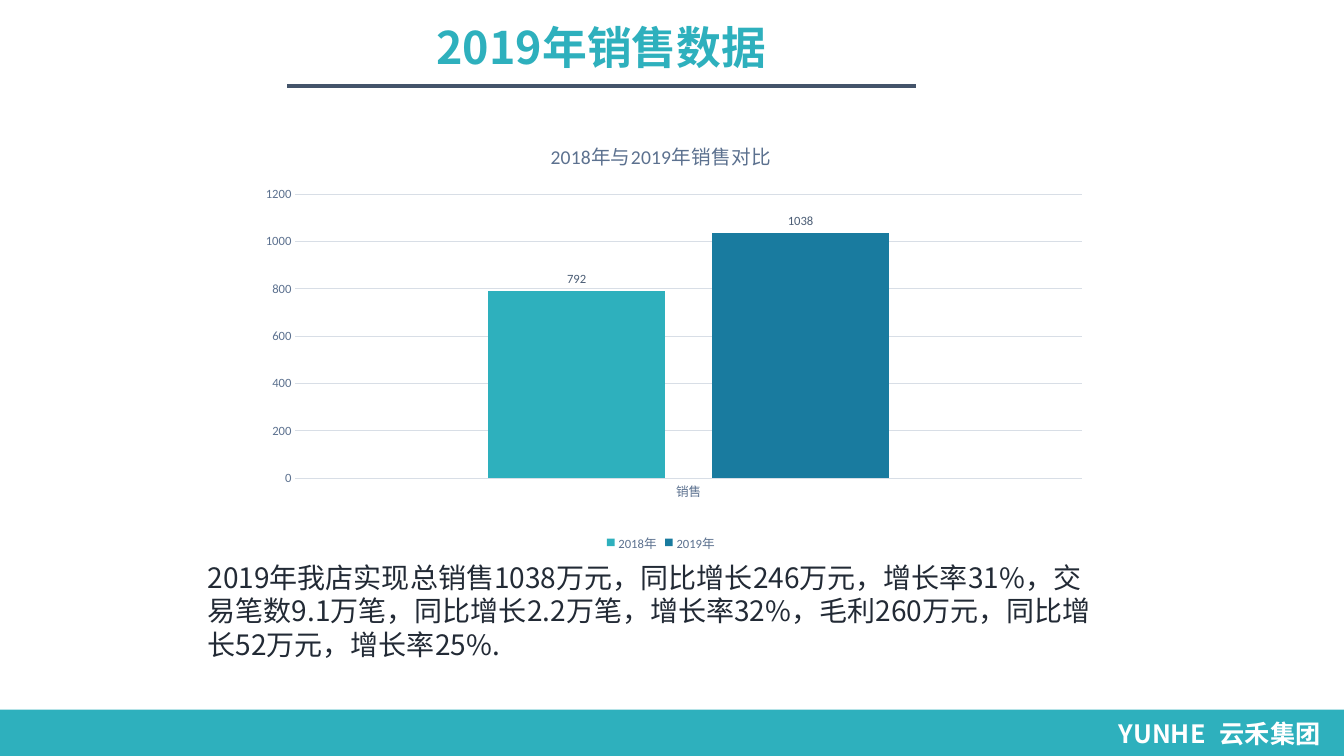
"""Build the 2019 sales slide with a column chart and a summary."""
from lxml import etree
from pptx import Presentation
from pptx.chart.data import CategoryChartData
from pptx.dml.color import RGBColor
from pptx.enum.chart import XL_CHART_TYPE as ChartType
from pptx.enum.chart import XL_LABEL_POSITION as LabelPosition
from pptx.enum.chart import XL_LEGEND_POSITION as LegendPosition
from pptx.enum.chart import XL_TICK_MARK as TickMark
from pptx.enum.shapes import MSO_CONNECTOR as Connector
from pptx.enum.shapes import MSO_SHAPE as Shape
from pptx.enum.text import MSO_ANCHOR as Anchor
from pptx.enum.text import PP_ALIGN as Align
from pptx.oxml import parse_xml
from pptx.oxml.ns import nsdecls, qn
from pptx.util import Inches, Pt

TEAL, BLUE, SLATE, GRID = "2EB0BD", "197B9F", "5C718F", "D8DEE6"
CJK = "Noto Sans CJK SC"


def color(value):
    """Turn a hex string into a colour."""
    return RGBColor.from_string(value)


def style_font(font, fill, **values):
    """Set the colour and the other format values of a font."""
    font.color.rgb = color(fill)
    for name, value in values.items():
        setattr(font, name, value)


presentation = Presentation()
presentation.slide_width = Inches(13.33)
presentation.slide_height = Inches(7.5)
slide = presentation.slides.add_slide(presentation.slide_layouts[6])

title_line = slide.shapes.add_connector(
    Connector.STRAIGHT, Inches(2.85), Inches(0.85), Inches(9.09), Inches(0.85))
title_line.line.color.rgb = color("44546A")
title_line.line.width = Pt(3)
etree.SubElement(title_line._element.spPr, qn("a:effectLst"))

footer = slide.shapes.add_shape(
    Shape.RECTANGLE, Inches(0), Inches(7.04), Inches(13.33), Inches(0.46))
footer.shadow.inherit = False
footer.fill.solid()
footer.fill.fore_color.rgb = color(TEAL)
footer.line.fill.background()

texts = [
    {"text": "2019年销售数据", "box": (1.74, 0.22, 8.45, 0.55), "size": 32,
     "fill": TEAL, "bold": True,
     "frame": {"vertical_anchor": Anchor.MIDDLE, "margin_left": 0, "margin_right": 0},
     "paragraph": {"alignment": Align.CENTER, "line_spacing": 0.9}},
    {"text": "YUNHE\t云禾集团", "box": (11, 7.08, 2.33, 0.4), "size": 18,
     "fill": "FFFFFF", "bold": True, "frame": {}, "paragraph": {}, "tab": 0.85},
    {"text": "2019年我店实现总销售1038万元，同比增长246万元，增长率31%，"
             "交易笔数9.1万笔，同比增长2.2万笔，增长率32%，"
             "毛利260万元，同比增长52万元，增长率25%.",
     "box": (1.96, 5.51, 9.04, 1.11), "size": 20, "fill": "222A35",
     "bold": False, "frame": {}, "paragraph": {}},
]
for item in texts:
    frame = slide.shapes.add_textbox(*map(Inches, item["box"])).text_frame
    frame.word_wrap = True
    paragraph = frame.paragraphs[0]
    for target, values in ((frame, item["frame"]), (paragraph, item["paragraph"])):
        for name, value in values.items():
            setattr(target, name, value)
    if "tab" in item:
        tabs = etree.SubElement(paragraph._p.get_or_add_pPr(), qn("a:tabLst"))
        etree.SubElement(tabs, qn("a:tab"), pos=str(Inches(item["tab"])), algn="l")
    run = paragraph.add_run()
    run.text = item["text"]
    style_font(run.font, item["fill"], name=CJK, size=Pt(item["size"]), bold=item["bold"])
    etree.SubElement(run._r.get_or_add_rPr(), qn("a:ea"), typeface=CJK)

sales = CategoryChartData()
sales.categories = ["销售"]
sales.add_series("2018年", [792])
sales.add_series("2019年", [1038])
chart = slide.shapes.add_chart(
    ChartType.COLUMN_CLUSTERED, Inches(2.32), Inches(1.21), Inches(8.47), Inches(4.3),
    sales).chart
style_font(chart.font, "222A35", name="Calibri", size=Pt(10))

chart.has_title = True
chart.chart_title.include_in_layout = False
chart_title = chart.chart_title.text_frame.paragraphs[0].add_run()
chart_title.text = "2018年与2019年销售对比"
style_font(chart_title.font, SLATE, name="Calibri", size=Pt(14), bold=False)

chart.has_legend = True
chart.legend.position = LegendPosition.BOTTOM
chart.legend.include_in_layout = False
small = {"name": "Calibri", "size": Pt(9)}
style_font(chart.legend.font, SLATE, **small)

category_axis, value_axis = chart.category_axis, chart.value_axis
for axis in (category_axis, value_axis):
    axis.major_tick_mark = axis.minor_tick_mark = TickMark.NONE
    style_font(axis.tick_labels.font, SLATE, **small)
for name, value in {"minimum_scale": 0, "maximum_scale": 1200, "major_unit": 200}.items():
    setattr(value_axis, name, value)
value_axis.format.line.fill.background()
for line in (category_axis.format.line, value_axis.major_gridlines.format.line):
    line.color.rgb = color(GRID)
    line.width = Pt(0.75)

plot = chart.plots[0]
for name, value in {"gap_width": 219, "overlap": -27, "vary_by_categories": False}.items():
    setattr(plot, name, value)
for series, fill in zip(plot.series, (TEAL, BLUE)):
    series.format.fill.solid()
    series.format.fill.fore_color.rgb = color(fill)
    labels = series.data_labels
    labels.show_value = True
    labels.position = LabelPosition.OUTSIDE_END
    style_font(labels.font, "4B5D75", **small)

plot_area = chart._chartSpace.chart.plotArea
for layout in plot_area.findall(qn("c:layout")):
    plot_area.remove(layout)
places = {"x": 0.072, "y": 0.167, "w": 0.921, "h": 0.655}
modes = "".join(f'<c:{name}Mode val="edge"/>' for name in "xy")
sizes = "".join(f'<c:{name} val="{value}"/>' for name, value in places.items())
plot_area.insert(0, parse_xml(
    f'<c:layout {nsdecls("c")}><c:manualLayout><c:layoutTarget val="inner"/>'
    f'{modes}{sizes}</c:manualLayout></c:layout>'))

presentation.save("out.pptx")
